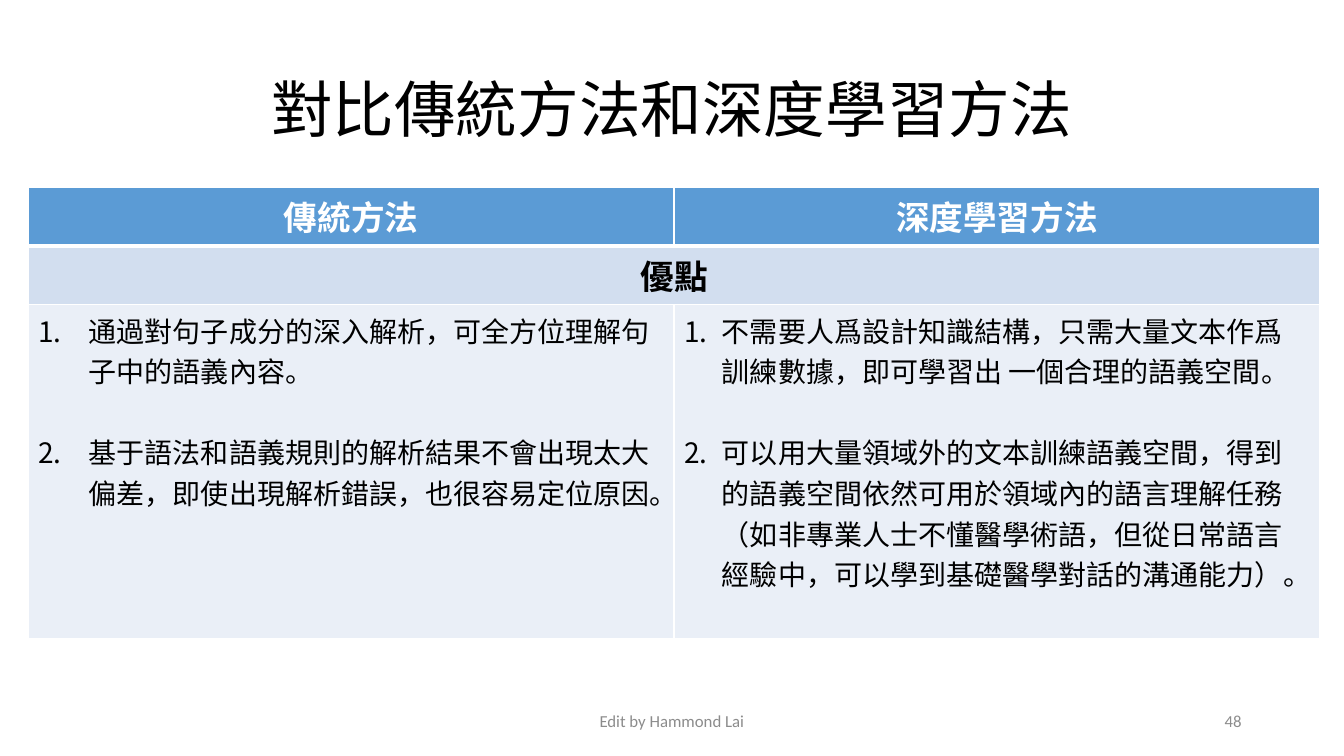
from dataclasses import dataclass

from lxml import etree
from pptx import Presentation
from pptx.dml.color import RGBColor
from pptx.enum.lang import MSO_LANGUAGE_ID
from pptx.enum.text import MSO_ANCHOR, PP_ALIGN
from pptx.oxml.ns import qn
from pptx.util import Pt

EMU_PER_PX = 9525
LEFT, CENTER, RIGHT = PP_ALIGN.LEFT, PP_ALIGN.CENTER, PP_ALIGN.RIGHT
MIDDLE = MSO_ANCHOR.MIDDLE
CHINESE = MSO_LANGUAGE_ID.SIMPLIFIED_CHINESE
HAN_FONT, LATIN_FONT = "Noto Sans CJK TC", "Calibri"
COLORS = {
    "text": "000000",
    "white": "FFFFFF",
    "header": "5B9BD5",
    "band": "D2DEEF",
    "body": "EAEFF7",
    "footer": "8C8C8C",
}
COLUMN_WIDTHS = (615, 615)
ROW_HEIGHTS = (56, 56, 318)


@dataclass(frozen=True)
class Style:
    size: int
    color: str
    font: str = HAN_FONT
    bold: bool = False
    align: PP_ALIGN = CENTER
    line_spacing: float = 1.0


@dataclass(frozen=True)
class Label:
    text: str
    box: tuple[int, int, int, int]
    style: Style


@dataclass(frozen=True)
class Method:
    name: str
    indent: int
    advantages: tuple[str, ...]


TITLE = Style(44, "text", line_spacing=0.9)
HEADER = Style(24, "white", bold=True)
SECTION = Style(24, "text", bold=True)
ADVANTAGE = Style(20, "text", align=LEFT)

LABELS = (
    Label("對比傳統方法和深度學習方法", (88, 38, 1104, 139), TITLE),
    Label("Edit by Hammond Lai", (424, 667, 432, 38), Style(12, "footer", LATIN_FONT)),
    Label("48", (904, 667, 288, 38), Style(12, "footer", LATIN_FONT, align=RIGHT)),
)

METHODS = (
    Method("傳統方法", 48, (
        "通過對句子成分的深入解析，可全方位理解句子中的語義內容",
        "基于語法和語義規則的解析結果不會出現太大偏差，即使出現解析錯誤，也很容易定位原因",
    )),
    Method("深度學習方法", 36, (
        "不需要人爲設計知識結構，只需大量文本作爲訓練數據，即可學習出 一個合理的語義空間",
        "可以用大量領域外的文本訓練語義空間，得到的語義空間依然可用於領域內的語言理解任務"
        "（如非專業人士不懂醫學術語，但從日常語言經驗中，可以學到基礎醫學對話的溝通能力）",
    )),
)


def px(length: int) -> int:
    return length * EMU_PER_PX


def color(name: str) -> RGBColor:
    return RGBColor.from_string(COLORS[name])


def add_run(paragraph, text: str, style: Style, font: str) -> None:
    run = paragraph.add_run()
    run.text = text
    run.font.size = Pt(style.size)
    run.font.bold = style.bold
    run.font.color.rgb = color(style.color)
    run.font.name = font
    if style.font == HAN_FONT:
        run.font.language_id = CHINESE
        etree.SubElement(run.font._element, qn("a:ea"), typeface=font)


def write_line(paragraph, text: str, style: Style) -> None:
    paragraph.alignment = style.align
    paragraph.line_spacing = style.line_spacing
    add_run(paragraph, text, style, style.font)


def add_label(slide, label: Label) -> None:
    frame = slide.shapes.add_textbox(*map(px, label.box)).text_frame
    frame.word_wrap = True
    frame.vertical_anchor = MIDDLE
    write_line(frame.paragraphs[0], label.text, label.style)


def paint_cell(cell, fill: str, bottom_width: int = 1, top_width: int = 1) -> None:
    properties = cell._tc.get_or_add_tcPr()
    widths = {"lnL": 1, "lnR": 1, "lnT": top_width, "lnB": bottom_width}
    for side, width in widths.items():
        line = etree.SubElement(properties, qn(f"a:{side}"), w=str(Pt(width)))
        solid = etree.SubElement(line, qn("a:solidFill"))
        etree.SubElement(solid, qn("a:srgbClr"), val=COLORS["white"])
    cell.fill.solid()
    cell.fill.fore_color.rgb = color(fill)


def write_advantages(cell, method: Method) -> None:
    frame = cell.text_frame
    for number, advantage in enumerate(method.advantages, start=1):
        paragraph = frame.paragraphs[0] if number == 1 else frame.add_paragraph()
        properties = paragraph._p.get_or_add_pPr()
        properties.set("marL", str(px(method.indent)))
        properties.set("indent", str(-px(method.indent)))
        etree.SubElement(
            properties, qn("a:buAutoNum"), type="arabicPeriod", startAt=str(number)
        )
        if number > 1:
            paragraph.space_before = Pt(29)
        write_line(paragraph, advantage, ADVANTAGE)
        add_run(paragraph, "。", ADVANTAGE, LATIN_FONT)


def add_comparison(slide) -> None:
    table = slide.shapes.add_table(
        len(ROW_HEIGHTS), len(METHODS), px(27), px(178),
        px(sum(COLUMN_WIDTHS)), px(sum(ROW_HEIGHTS)),
    ).table
    for column, width in zip(table.columns, COLUMN_WIDTHS):
        column.width = px(width)
    for row, height in zip(table.rows, ROW_HEIGHTS):
        row.height = px(height)
    for index, method in enumerate(METHODS):
        header, section, body = (table.cell(row, index) for row in range(3))
        paint_cell(header, "header", bottom_width=3)
        paint_cell(section, "band", top_width=3)
        paint_cell(body, "body")
        write_line(header.text_frame.paragraphs[0], method.name, HEADER)
        write_advantages(body, method)
    advantages_heading = table.cell(1, 0)
    advantages_heading.merge(table.cell(1, len(METHODS) - 1))
    write_line(advantages_heading.text_frame.paragraphs[0], "優點", SECTION)


def main() -> None:
    presentation = Presentation()
    presentation.slide_width = px(1280)
    presentation.slide_height = px(720)
    slide = presentation.slides.add_slide(presentation.slide_layouts[6])
    slide.background.fill.solid()
    slide.background.fill.fore_color.rgb = color("white")
    title, *footers = LABELS
    add_label(slide, title)
    add_comparison(slide)
    for footer in footers:
        add_label(slide, footer)
    presentation.save("out.pptx")


if __name__ == "__main__":
    main()
